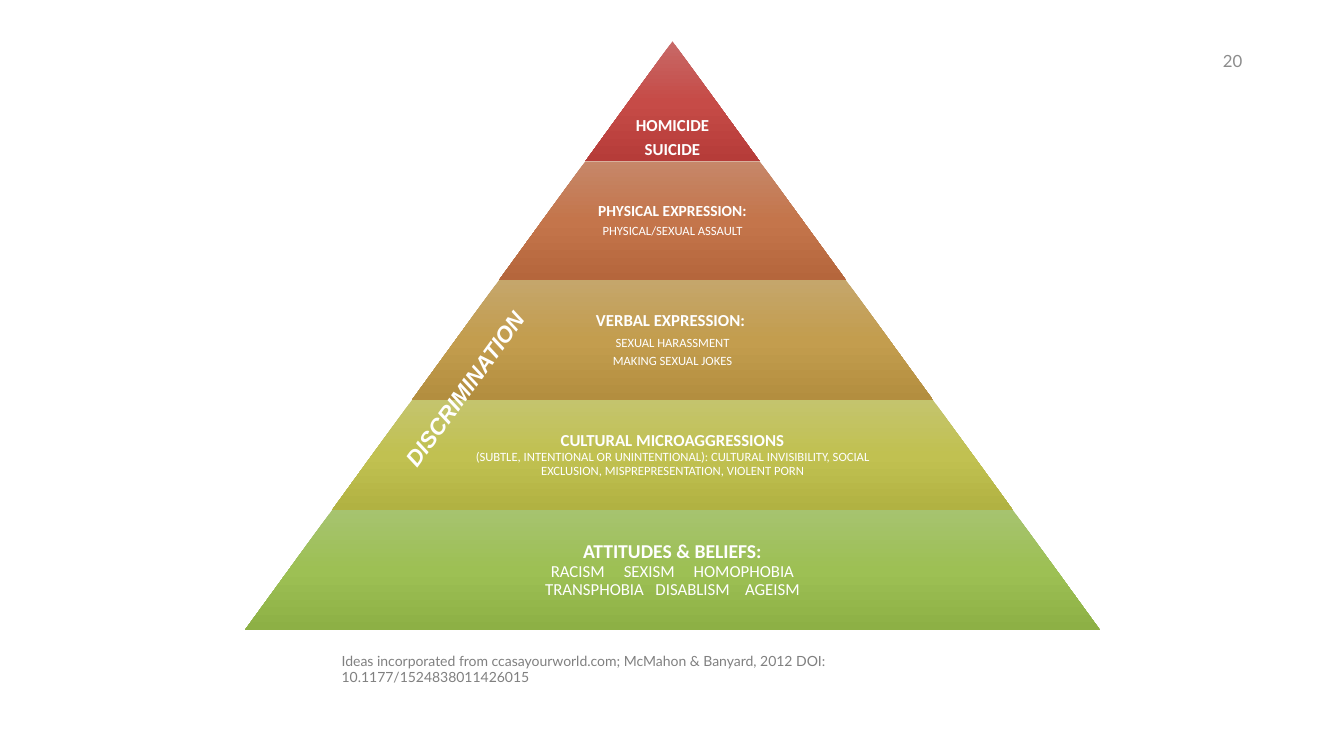
from copy import deepcopy

from pptx import Presentation
from pptx import util as u
from pptx.dml.color import RGBColor
from pptx.enum import shapes, text

SLOPE = 0.726
APEX_X, APEX_Y = 6.67, 0.41
PADDING = 0.02
BREAK = ("\n", 0, False, 0)


def color(value):
    """Turn a hex string into a colour."""
    return RGBColor.from_string(value)


def heading(words, size):
    """Describe a bold run."""
    return (words, size, True, 0)


def detail(words, size=9):
    """Describe a regular run."""
    return (words, size, False, 0)


def spread(words, gaps):
    """Describe a row of words parted by single spaces widened by the given points."""
    row = [detail(words[0], 12)]
    for word, gap in zip(words[1:], gaps):
        row += [(" ", 12, False, gap), detail(word, 12)]
    return row


LEVELS = [
    (1.19, ("C76967", "C64B47", "B63C39"),
     [[heading("HOMICIDE", 12)], [heading("SUICIDE", 12)]]),
    (1.18, ("C68769", "C4754B", "B5663C"),
     [[heading("PHYSICAL EXPRESSION:", 11)], [detail("PHYSICAL/SEXUAL ASSAULT")]]),
    (1.19, ("C5A66B", "C39D4E", "B38E3F"),
     [[heading("VERBAL EXPRESSION: ", 12)], [detail("SEXUAL HARASSMENT")],
      [detail("MAKING SEXUAL JOKES")]]),
    (1.09, ("C4C46D", "C1C151", "B1B242"),
     [[heading("CULTURAL MICROAGGRESSIONS", 12), BREAK,
       detail("(SUBTLE, INTENTIONAL OR UNINTENTIONAL): CULTURAL INVISIBILITY, SOCIAL "
              "EXCLUSION, MISPREPRESENTATION, VIOLENT PORN")]]),
    (1.19, ("A6C36F", "9DC054", "8DB045"),
     [[heading("ATTITUDES & BELIEFS:", 14), BREAK,
       *spread(["RACISM", "SEXISM", "HOMOPHOBIA"], [10.8, 10.8]), BREAK,
       *spread(["TRANSPHOBIA", "DISABLISM", "AGEISM"], [5.4, 8.1])]]),
]


def add_text_frame(slide, box, **frame_format):
    """Add a wrapping text box and return its shape."""
    holder = slide.shapes.add_textbox(*map(u.Inches, box))
    holder.text_frame.word_wrap = True
    for name, value in frame_format.items():
        setattr(holder.text_frame, name, value)
    return holder


def style(font, hex_color, **font_format):
    """Apply a colour and format values to a font."""
    font.color.rgb = color(hex_color)
    for name, value in font_format.items():
        setattr(font, name, value)


def add_band(slide, box, gradient):
    """Draw one sloping band of the pyramid with a vertical gradient."""
    band = slide.shapes.add_shape(shapes.MSO_SHAPE.TRAPEZOID, *map(u.Inches, box))
    band.adjustments[0] = SLOPE
    band.shadow.inherit = False
    band.line.fill.background()
    band.fill.gradient()
    band.fill.gradient_angle = 270
    stop_list = band.fill.gradient_stops[0]._gs.getparent()
    stop_list.insert(1, deepcopy(stop_list[0]))
    for stop, position, hex_color in zip(band.fill.gradient_stops, (0, 0.5, 1), gradient):
        stop.position = position
        stop.color.rgb = color(hex_color)


def add_band_text(slide, box, paragraphs, anchor):
    """Write the centred paragraphs of one band."""
    margins = dict.fromkeys(
        ("margin_left", "margin_right", "margin_top", "margin_bottom"), u.Inches(PADDING))
    frame = add_text_frame(slide, box, vertical_anchor=anchor, **margins).text_frame
    for index, runs in enumerate(paragraphs):
        paragraph = frame.add_paragraph() if index else frame.paragraphs[0]
        paragraph.alignment = text.PP_ALIGN.CENTER
        paragraph.line_spacing = 0.9
        paragraph.space_after = u.Pt(round(0.35 * runs[0][1], 1))
        for words, size, bold, widening in runs:
            if words == "\n":
                paragraph.add_line_break()
                continue
            run = paragraph.add_run()
            run.text = words
            style(run.font, "FFFFFF", name="Calibri", size=u.Pt(size), bold=bold)
            if widening:
                run.font._element.set("spc", str(round(widening * 100)))


def add_pyramid(slide, apex_x, apex_y):
    """Stack the levels downward from the apex."""
    top = apex_y
    for index, (height, gradient, paragraphs) in enumerate(LEVELS):
        width = 2 * SLOPE * (top + height - apex_y)
        text_width = 0.65 * width if index else width
        anchor = text.MSO_ANCHOR.MIDDLE if index else text.MSO_ANCHOR.BOTTOM
        add_band(slide, (apex_x - width / 2, top, width, height), gradient)
        add_band_text(slide, (apex_x - text_width / 2, top, text_width, height),
                      paragraphs, anchor)
        top += height


def add_label(slide, box, words, hex_color, font_format, rotation=0, alignment=None,
              **frame_format):
    """Write a single-paragraph label in its box."""
    label = add_text_frame(slide, box, **frame_format)
    label.rotation = rotation
    paragraph = label.text_frame.paragraphs[0]
    paragraph.alignment = alignment
    run = paragraph.add_run()
    run.text = words
    style(run.font, hex_color, **font_format)


def main():
    """Build and save the slide."""
    deck = Presentation()
    deck.slide_width, deck.slide_height = u.Inches(13.33), u.Inches(7.5)
    slide = deck.slides.add_slide(deck.slide_layouts[6])
    grow = text.MSO_AUTO_SIZE.SHAPE_TO_FIT_TEXT
    add_label(slide, (3.29, 6.42, 6.75, 0.27),
              "Ideas incorporated from ccasayourworld.com; McMahon & Banyard, 2012 "
              "DOI: 10.1177/1524838011426015",
              "808080", {"name": "Lato", "size": u.Pt(10)}, auto_size=grow)
    add_pyramid(slide, APEX_X, APEX_Y)
    add_label(slide, (3.54, 3.57, 2.28, 0.37), "DISCRIMINATION", "FFFFFF",
              {"name": "Arial", "size": u.Pt(16), "bold": True, "italic": True},
              rotation=306, auto_size=grow)
    add_label(slide, (9.42, 0.4, 3, 0.4), "20", "8C8C8C",
              {"name": "Lato", "size": u.Pt(12)}, alignment=text.PP_ALIGN.RIGHT,
              vertical_anchor=text.MSO_ANCHOR.MIDDLE)
    deck.save("out.pptx")


if __name__ == "__main__":
    main()
